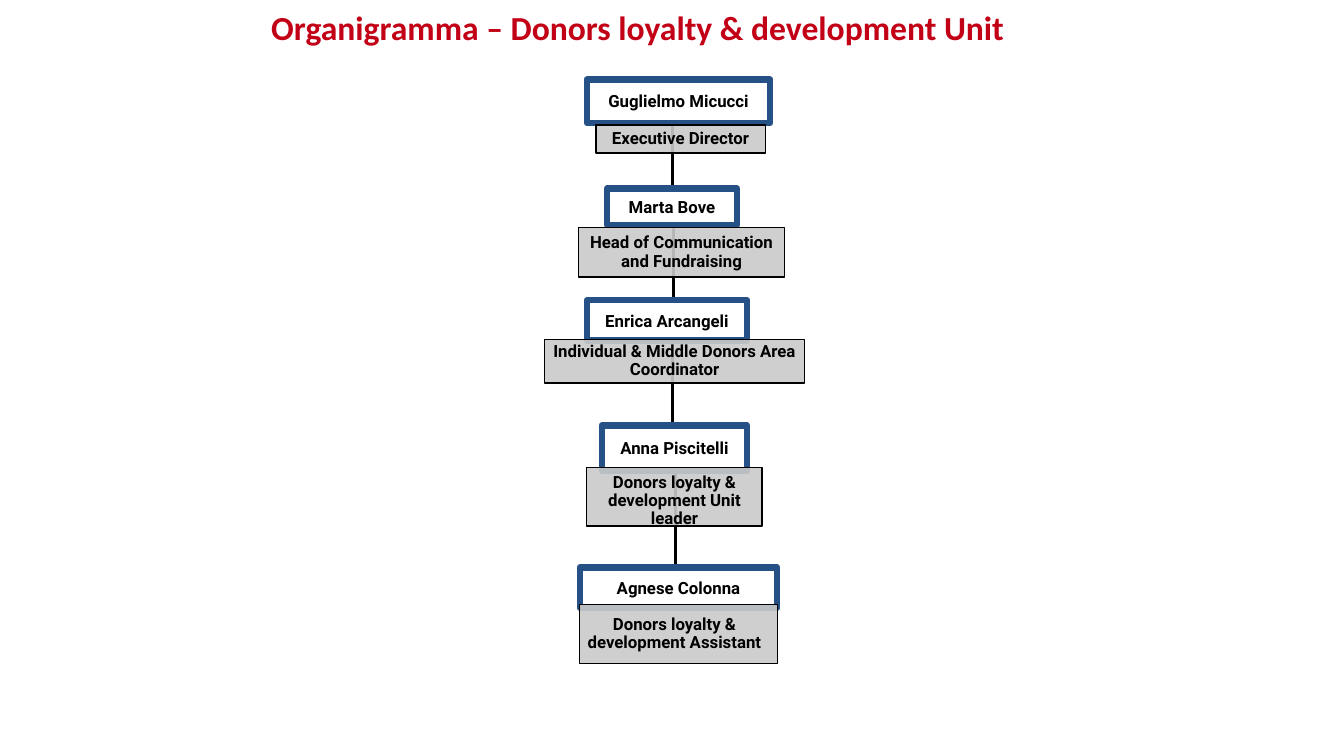
from itertools import pairwise

from lxml import etree
from pptx import Presentation
from pptx import util as u
from pptx.dml.color import RGBColor
from pptx.enum import shapes, text
from pptx.oxml.ns import qn

RED = RGBColor(0xC2, 0x00, 0x16)
BLUE = RGBColor(0x25, 0x51, 0x86)
GREY = RGBColor(0xCA, 0xCA, 0xCA)
BLACK = RGBColor(0, 0, 0)
WHITE = RGBColor(0xFF, 0xFF, 0xFF)

GRID = u.Inches(0.1)  # one column or row
TITLE_BOX = (25.9, 0.4, 100, 5)
CHART_BOX = (54, 7.9)  # left, top

# name, name box, role, role box, extra top and right inset of the role,
# column of the line to the next post; boxes are relative to the chart
POSTS = [
    ("Guglielmo Micucci", (4.2, 0, 18.2, 4.3),
     "Executive Director", (5.1, 4.5, 16.8, 2.8), 0, 0, 12.7),
    ("Marta Bove", (6.2, 10.8, 12.9, 3.6),
     "Head of Communication and Fundraising", (3.4, 14.7, 20.4, 4.9), 0, 0, 12.8),
    ("Enrica Arcangeli", (4.2, 21.9, 15.9, 4),
     "Individual & Middle Donors Area Coordinator", (0, 25.8, 25.8, 4.3), 0, 0, 12.7),
    ("Anna Piscitelli", (5.7, 34.3, 14.4, 4.5),
     "Donors loyalty & development Unit leader", (4.2, 38.5, 17.4, 5.8), 0.8, 0, 13),
    ("Agnese Colonna", (3.5, 48.4, 19.6, 4),
     "Donors loyalty & development Assistant", (3.5, 52.1, 19.6, 5.8), 0, 0.8, None),
]


def cells(*values):
    return [int(v * GRID) for v in values]


def format_text(tf, font, size, color, align, spacing):
    tf.word_wrap = True
    tf.auto_size = text.MSO_AUTO_SIZE.NONE
    tf.vertical_anchor = text.MSO_ANCHOR.MIDDLE
    p = tf.paragraphs[0]
    p.alignment, p.line_spacing = align, spacing
    f = p.runs[0].font
    f.name, f.size, f.bold = font, u.Pt(size), True
    f.color.rgb = color


def add_title(slide, box):
    sp = slide.shapes.title
    sp.left, sp.top, sp.width, sp.height = cells(*box)
    tf = sp.text_frame
    tf.text = "Organigramma – Donors loyalty & development Unit"
    format_text(tf, "Calibri", 24, RED, text.PP_ALIGN.LEFT, 0.9)
    add_text_shadow(tf.paragraphs[0].runs[0])


def add_text_shadow(r):
    effects = etree.Element(qn("a:effectLst"))
    shadow = etree.SubElement(effects, qn("a:outerShdw"), blurRad="38100",
                              dist="38100", dir="2700000", algn="tl")
    color = etree.SubElement(shadow, qn("a:srgbClr"), val="000000")
    etree.SubElement(color, qn("a:alpha"), val="20000")
    r.font.fill._xPr.find(qn("a:solidFill")).addnext(effects)


def add_box(slide, origin, box, label, fill, line, line_width, spacing=1.0):
    x, y, w, h = box
    sp = slide.shapes.add_shape(shapes.MSO_SHAPE.RECTANGLE,
                                *cells(origin[0] + x, origin[1] + y, w, h))
    sp.shadow.inherit = False
    sp.fill.solid()
    sp.fill.fore_color.rgb = fill
    sp.line.color.rgb = line
    sp.line.width = u.Pt(line_width)
    sp.text_frame.text = label
    format_text(sp.text_frame, "Roboto", 12, BLACK, text.PP_ALIGN.CENTER, spacing)
    return sp


def add_role(slide, origin, box, role, extra_top, extra_right):
    sp = add_box(slide, origin, box, role, GREY, BLACK, 1, 0.9)
    color = sp._element.spPr.find(qn("a:solidFill"))[0]
    etree.SubElement(color, qn("a:alpha"), val="90000")
    tf = sp.text_frame
    tf.margin_left, tf.margin_right = cells(0.3, 0.3 + extra_right)
    tf.margin_top, tf.margin_bottom = cells(0.1 + extra_top, 0.1)


def add_line(slide, origin, x, top, bottom):
    x = origin[0] + x
    line = slide.shapes.add_connector(
        shapes.MSO_CONNECTOR.STRAIGHT,
        *cells(x, origin[1] + top, x, origin[1] + bottom))
    line.line.color.rgb = BLACK
    line.line.width = u.Pt(2.25)
    etree.SubElement(line._element.spPr, qn("a:effectLst"))


def add_chart_of_posts(slide, origin):
    for post, below in pairwise(POSTS):
        _, top, _, height = post[1]
        add_line(slide, origin, post[-1], top + height, below[1][1])
    for name, name_box, role, role_box, extra_top, extra_right, _ in POSTS:
        add_box(slide, origin, name_box, name, WHITE, BLUE, 4.5)
        add_role(slide, origin, role_box, role, extra_top, extra_right)


def main():
    prs = Presentation()
    prs.slide_width, prs.slide_height = u.Inches(13.33), u.Inches(7.5)
    slide = prs.slides.add_slide(prs.slide_layouts[5])
    add_title(slide, TITLE_BOX)
    add_chart_of_posts(slide, CHART_BOX)
    prs.save("out.pptx")


if __name__ == "__main__":
    main()
